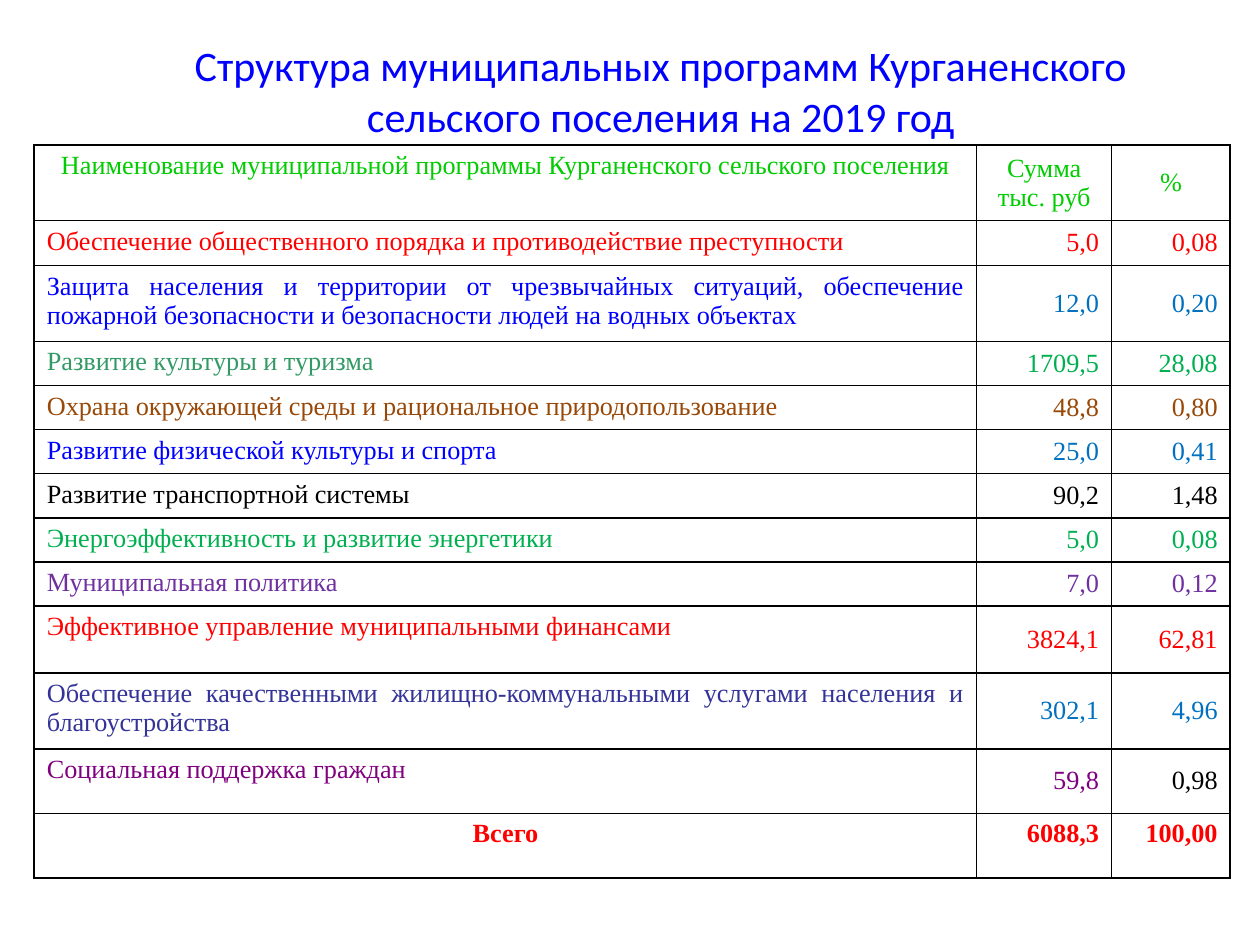
from dataclasses import dataclass

from lxml.etree import SubElement
from pptx import Presentation
from pptx.dml.color import RGBColor
from pptx.enum.text import MSO_ANCHOR, PP_ALIGN
from pptx.oxml.ns import qn
from pptx.table import Table, _Cell
from pptx.text.text import TextFrame
from pptx.util import Cm, Pt

SERIF = "Times New Roman"
BLACK, RED, BLUE, SKY = "000000", "FF0000", "0000FF", "0070C0"
LIME, GREEN, PLUM = "00CC00", "00B050", "800080"
TOP, MID = MSO_ANCHOR.TOP, MSO_ANCHOR.MIDDLE
LEFT, RIGHT, CENTER, FULL = (PP_ALIGN.LEFT, PP_ALIGN.RIGHT,
                             PP_ALIGN.CENTER, PP_ALIGN.JUSTIFY)


@dataclass
class Row:
    """One programme; sum and share take the name's colour unless told."""
    name: str
    total: str
    share: str
    tall: float
    hue: str
    sum_hue: str = ""
    part_hue: str = ""
    aligns: tuple = (FULL, RIGHT, RIGHT)
    anchor: MSO_ANCHOR = MID
    bold: bool = False


WIDTHS = (19, 2.72, 2.39)
ROWS = [
    Row("Наименование муниципальной программы Курганенского сельского поселения",
        "Сумма тыс. руб", "%", 1.04, LIME, aligns=(CENTER,) * 3),
    Row("Обеспечение общественного порядка и противодействие преступности",
        "5,0", "0,08", 0.91, RED),
    Row("Защита населения и территории от чрезвычайных ситуаций, обеспечение "
        "пожарной безопасности и безопасности людей на водных объектах",
        "12,0", "0,20", 1.19, BLUE, SKY, SKY),
    Row("Развитие культуры и туризма", "1709,5", "28,08", 0.66,
        "339966", GREEN, GREEN),
    Row("Охрана окружающей среды и рациональное природопользование",
        "48,8", "0,80", 0.76, "984807"),
    Row("Развитие физической культуры и спорта", "25,0", "0,41", 0.84,
        BLUE, SKY, SKY),
    Row("Развитие транспортной системы", "90,2", "1,48", 0.84, BLACK),
    Row("Энергоэффективность и развитие энергетики", "5,0", "0,08", 0.66,
        GREEN),
    Row("Муниципальная политика", "7,0", "0,12", 0.66, "7030A0"),
    Row("Эффективное управление муниципальными финансами",
        "3824,1", "62,81", 1.35, RED),
    Row("Обеспечение качественными жилищно-коммунальными услугами населения "
        "и благоустройства", "302,1", "4,96", 0.51, "333399", SKY, SKY),
    Row("Социальная поддержка граждан", "59,8", "0,98", 1.3, PLUM,
        part_hue=BLACK),
    Row("Всего", "6088,3", "100,00", 1.3, RED,
        aligns=(CENTER, RIGHT, RIGHT), anchor=TOP, bold=True),
]


def color(code: str) -> RGBColor:
    return RGBColor.from_string(code)


def write(frame: TextFrame, text: str, font: str, size: float, hue: str,
          align: PP_ALIGN, bold: bool = False) -> None:
    frame.text = text
    for para in frame.paragraphs:
        para.alignment = align
        for run in para.runs:
            run.font.name = font
            run.font.size = Pt(size)
            run.font.bold = bold
            run.font.color.rgb = color(hue)


def frame_cell(cell: _Cell) -> None:
    """Draw thin black lines on all four sides and clear the fill."""
    props = cell._tc.get_or_add_tcPr()
    for side in ("lnL", "lnR", "lnT", "lnB"):
        line = SubElement(props, qn(f"a:{side}"), w=str(Pt(1)))
        fill = SubElement(line, qn("a:solidFill"))
        SubElement(fill, qn("a:srgbClr"), val=BLACK)
    cell.fill.background()


def fill_row(table: Table, index: int, row: Row) -> None:
    table.rows[index].height = Cm(row.tall)
    texts = (row.name, row.total, row.share)
    hues = (row.hue, row.sum_hue or row.hue, row.part_hue or row.hue)
    anchors = (TOP, row.anchor, row.anchor)
    parts = zip(table.rows[index].cells, texts, hues, row.aligns, anchors)
    for cell, text, hue, align, anchor in parts:
        frame_cell(cell)
        cell.vertical_anchor = anchor
        write(cell.text_frame, text, SERIF, 15, hue, align, row.bold)


def main() -> None:
    deck = Presentation()
    deck.slide_width, deck.slide_height = Cm(25.4), Cm(19.05)
    slide = deck.slides.add_slide(deck.slide_layouts[6])

    title = slide.shapes.add_textbox(Cm(2.54), Cm(0.71), Cm(21.56), Cm(2.21))
    title.text_frame.word_wrap = True
    title.text_frame.vertical_anchor = MID
    write(title.text_frame, "Структура муниципальных программ Курганенского "
          "сельского поселения на 2019 год", "Calibri", 24, BLUE, CENTER)

    tall = sum(row.tall for row in ROWS)
    table = slide.shapes.add_table(len(ROWS), len(WIDTHS), Cm(0.69), Cm(2.92),
                                   Cm(sum(WIDTHS)), Cm(tall)).table
    table.first_row = table.horz_banding = False
    for column, width in zip(table.columns, WIDTHS):
        column.width = Cm(width)
    for index, row in enumerate(ROWS):
        fill_row(table, index, row)

    deck.save("out.pptx")


if __name__ == "__main__":
    main()
